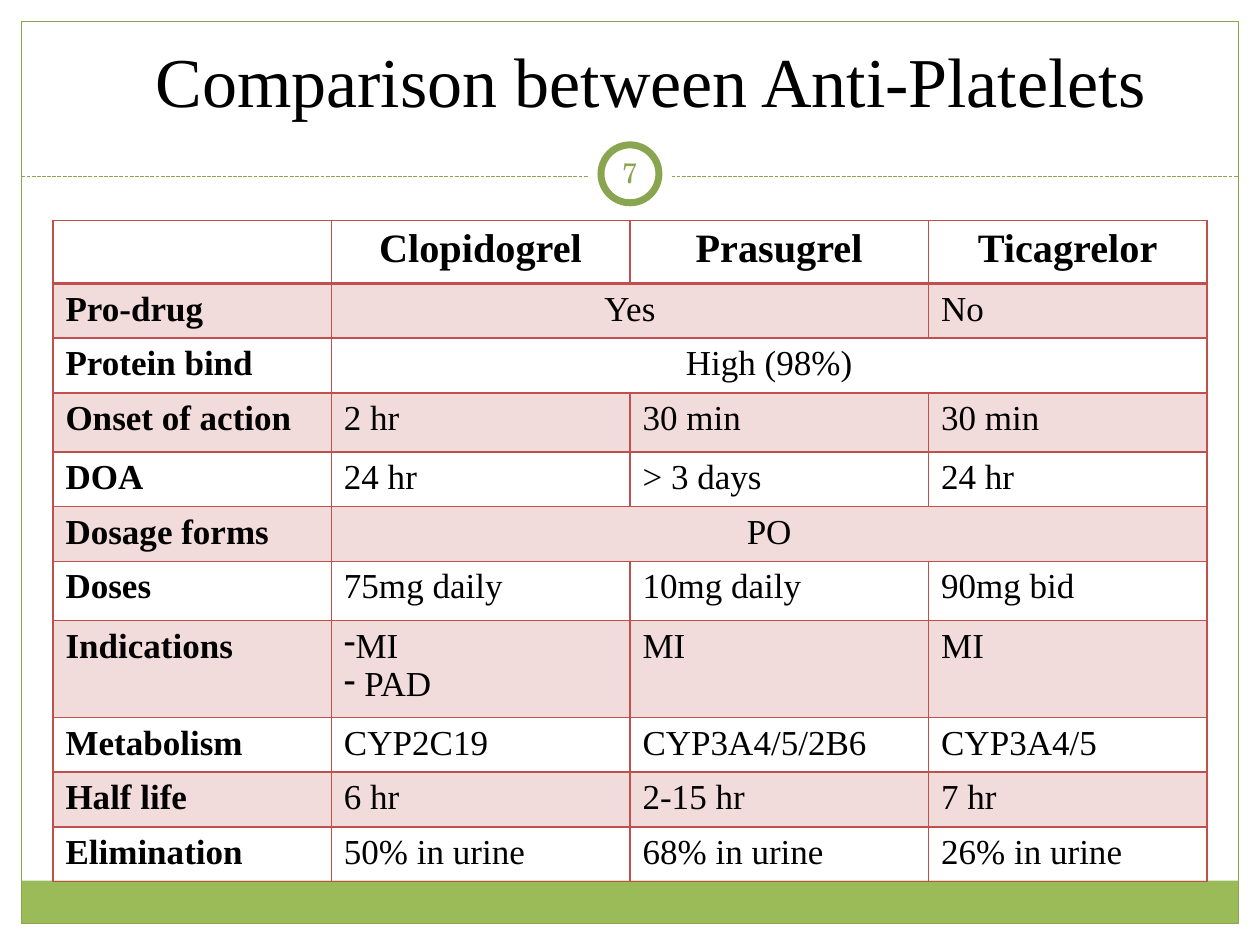
import pptx
import pptx.util
import pptx.dml.color
import pptx.enum.dml
import pptx.enum.shapes
import pptx.enum.text
import pptx.oxml
import pptx.oxml.ns

# Content: a number after the text is how many columns it spans
TITLE = "Comparison between Anti-Platelets"
PAGE = "7"
ROWS = [
    ["", "Clopidogrel", "Prasugrel", "Ticagrelor"],
    ["Pro-drug", ("Yes", 2), "No"],
    ["Protein bind", ("High (98%)", 3)],
    ["Onset of action", "2 hr", "30 min", "30 min"],
    ["DOA", "24 hr", "> 3 days", "24 hr"],
    ["Dosage forms", ("PO", 3)],
    ["Doses", "75mg daily", "10mg daily", "90mg bid"],
    ["Indications", ["MI", " PAD"], "MI", "MI"],
    ["Metabolism", "CYP2C19", "CYP3A4/5/2B6", "CYP3A4/5"],
    ["Half life", "6 hr", "2-15 hr", "7 hr"],
    ["Elimination", "50% in urine", "68% in urine", "26% in urine"],
]

THEME = {
    "paper": "FFFFFF", "band": "9BBB59", "edge": "89A54F",
    "grid": "C0504D", "ink": "000000", "tint": 20,
    "body": "Times New Roman", "number": "TeX Gyre Schola",
    "title_size": 40, "head_size": 23, "cell_size": 20, "page_size": 16,
}

# Layout
WIDTH, HEIGHT = 10, 7.5
MARGIN = 0.17
INNER = WIDTH - 2 * MARGIN
BAND_TOP, RULE_Y = 6.99, 1.4
BADGE_Y = 1.38
TABLE_LEFT, TABLE_TOP, TABLE_HEIGHT = 0.42, 1.75, 5.23
COLUMNS = [2.21, 2.37, 2.37, 2.21]
TALL_ROWS = {0: 0.5, 3: 0.47, 6: 0.47, 7: 0.77}
PLAIN_ROW = (TABLE_HEIGHT - sum(TALL_ROWS.values())) / (len(ROWS) - len(TALL_ROWS))

inch = pptx.util.Inches
CENTER = pptx.enum.text.PP_ALIGN.CENTER
LEFT = pptx.enum.text.PP_ALIGN.LEFT
SHAPE = pptx.enum.shapes.MSO_SHAPE


def rgb(name):
    return pptx.dml.color.RGBColor.from_string(THEME[name])


def apply(target, values):
    for key, value in values.items():
        setattr(target, key, value)


def add_panel(slide, kind, box, fill=None, line=None, weight=0.75):
    panel = slide.shapes.add_shape(kind, *map(inch, box))
    panel.shadow.inherit = False
    if fill:
        panel.fill.solid()
        panel.fill.fore_color.rgb = rgb(fill)
    else:
        panel.fill.background()
    if line:
        panel.line.color.rgb = rgb(line)
        panel.line.width = pptx.util.Pt(weight)
    else:
        panel.line.fill.background()


def write(paragraph, text, size, font="body", color="ink", bold=False, align=LEFT):
    paragraph.alignment = align
    run = paragraph.add_run()
    run.text = text
    apply(run.font, {"name": THEME[font], "size": pptx.util.Pt(THEME[size]), "bold": bold})
    run.font.color.rgb = rgb(color)


def add_label(slide, box, text, frame_format, **style):
    frame = slide.shapes.add_textbox(*map(inch, box)).text_frame
    apply(frame, {"word_wrap": True, **frame_format})
    write(frame.paragraphs[0], text, align=CENTER, **style)


def add_dash_bullet(paragraph):
    properties = paragraph._p.get_or_add_pPr()
    properties.set("marL", "0")
    properties.set("indent", "0")
    bullet = pptx.oxml.parse_xml(f'<a:buChar {pptx.oxml.ns.nsdecls("a")} char="-"/>')
    properties.append(bullet)


def style_cell(cell, shaded, header):
    properties = cell._tc.get_or_add_tcPr()
    if shaded:
        cell.fill.solid()
        cell.fill.fore_color.rgb = rgb("grid")
        color = properties.find(".//" + pptx.oxml.ns.qn("a:srgbClr"))
        color.append(pptx.oxml.parse_xml(
            f'<a:alpha {pptx.oxml.ns.nsdecls("a")} val="{THEME["tint"] * 1000}"/>'))
    else:
        cell.fill.background()
    for place, side in enumerate("LRTB"):
        points = 2 if header and side == "B" else 1
        properties.insert(place, pptx.oxml.parse_xml(
            f'<a:ln{side} {pptx.oxml.ns.nsdecls("a")} w="{points * 12700}"><a:solidFill>'
            f'<a:srgbClr val="{THEME["grid"]}"/></a:solidFill></a:ln{side}>'))


def add_comparison(slide):
    table = slide.shapes.add_table(
        len(ROWS), len(COLUMNS), inch(TABLE_LEFT), inch(TABLE_TOP),
        inch(sum(COLUMNS)), inch(TABLE_HEIGHT)).table
    apply(table, {"first_row": False, "horz_banding": False})
    for column, width in zip(table.columns, COLUMNS):
        column.width = inch(width)
    for r, entries in enumerate(ROWS):
        header = r == 0
        table.rows[r].height = inch(TALL_ROWS.get(r, PLAIN_ROW))
        for c in range(len(COLUMNS)):
            style_cell(table.cell(r, c), r % 2 == 1, header)
        c = 0
        for entry in entries:
            content, span = entry if isinstance(entry, tuple) else (entry, 1)
            cell = table.cell(r, c)
            if span > 1:
                cell.merge(table.cell(r, c + span - 1))
            bulleted = isinstance(content, list)
            for i, text in enumerate(content if bulleted else [content]):
                frame = cell.text_frame
                paragraph = frame.add_paragraph() if i else frame.paragraphs[0]
                if text:
                    write(paragraph, text, "head_size" if header else "cell_size",
                          bold=header or c == 0,
                          align=CENTER if header or span > 1 else LEFT)
                if bulleted:
                    add_dash_bullet(paragraph)
            c += span


def add_rule(slide):
    rule = slide.shapes.add_connector(
        pptx.enum.shapes.MSO_CONNECTOR.STRAIGHT,
        *map(inch, (MARGIN, RULE_Y, WIDTH - MARGIN, RULE_Y)))
    rule.line.color.rgb = rgb("edge")
    apply(rule.line, {"width": pptx.util.Pt(0.75),
                      "dash_style": pptx.enum.dml.MSO_LINE.SQUARE_DOT})
    rule._element.spPr.append(
        pptx.oxml.parse_xml(f'<a:effectLst {pptx.oxml.ns.nsdecls("a")}/>'))


def centered(size):
    return (WIDTH - size) / 2, BADGE_Y - size / 2, size, size


def main():
    deck = pptx.Presentation()
    apply(deck, {"slide_width": inch(WIDTH), "slide_height": inch(HEIGHT)})
    slide = deck.slides.add_slide(deck.slide_layouts[6])

    # White margins, green band and frame
    for box in [(0, 0, WIDTH, 1.52), (0, 0, MARGIN, HEIGHT),
                (WIDTH - MARGIN, 0, MARGIN, HEIGHT)]:
        add_panel(slide, SHAPE.RECTANGLE, box, fill="paper")
    add_panel(slide, SHAPE.RECTANGLE,
              (MARGIN, BAND_TOP, INNER, HEIGHT - MARGIN - BAND_TOP), fill="band")
    add_panel(slide, SHAPE.RECTANGLE,
              (MARGIN, MARGIN, INNER, HEIGHT - 2 * MARGIN), line="edge")

    # Dashed rule with the page badge
    add_rule(slide)
    add_panel(slide, SHAPE.OVAL, centered(0.67), fill="paper")
    add_panel(slide, SHAPE.OVAL, centered(0.46), fill="paper", line="edge", weight=4)

    # Title, table and page number
    add_label(slide, (0.33, 0.25, 9.67, 0.77), TITLE, {}, size="title_size")
    add_comparison(slide)
    insets = {f"margin_{side}": inch(0.05) for side in ("left", "right", "top", "bottom")}
    add_label(slide, (4.75, 1.13, 0.5, 0.48), PAGE,
              {"vertical_anchor": pptx.enum.text.MSO_ANCHOR.MIDDLE, **insets},
              size="page_size", font="number", color="edge")
    deck.save("out.pptx")


if __name__ == "__main__":
    main()
